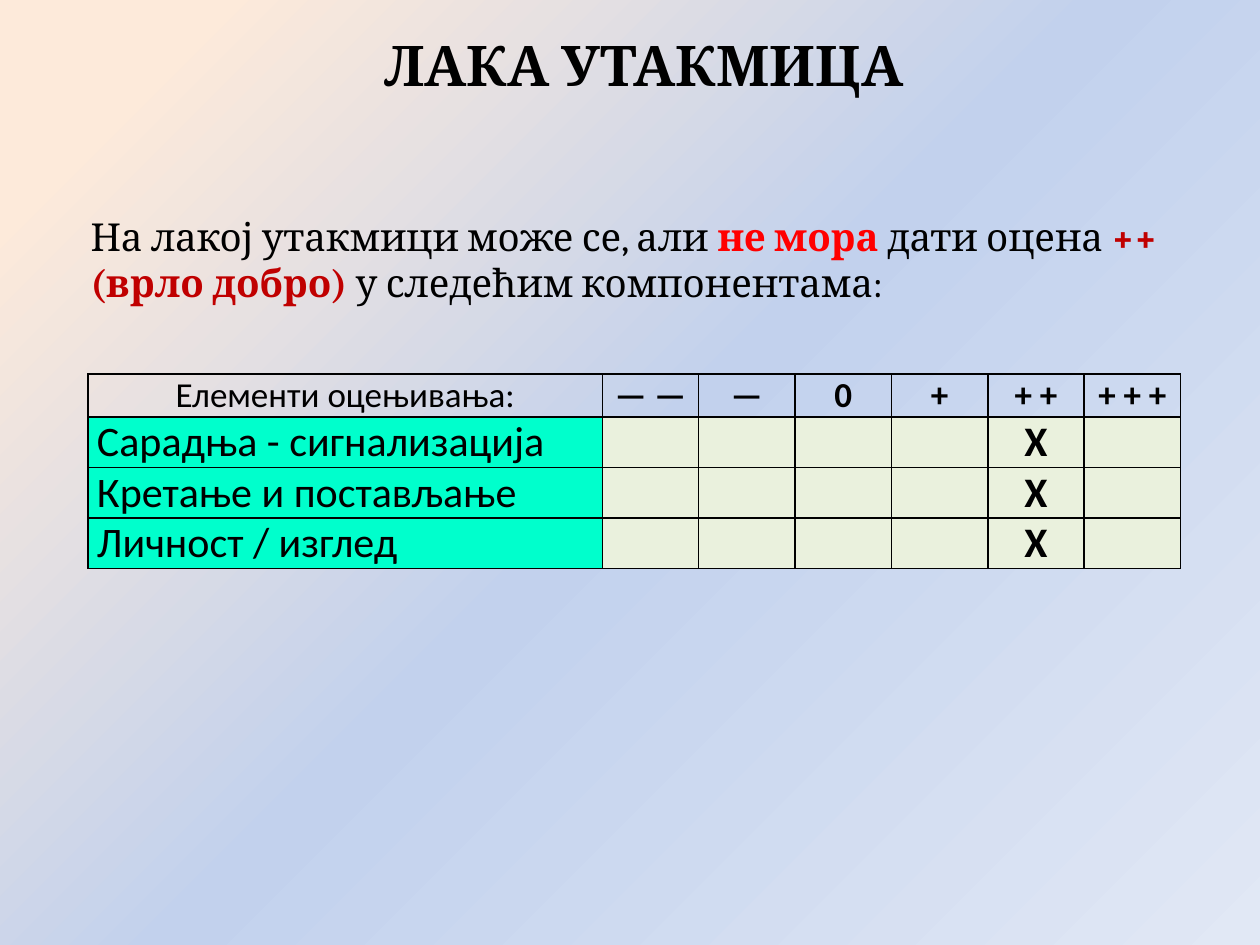
from copy import deepcopy
from dataclasses import dataclass

from lxml.etree import SubElement
from pptx import Presentation
from pptx.dml.color import RGBColor
from pptx.enum.text import MSO_ANCHOR as Anchor, PP_ALIGN as Align
from pptx.oxml.ns import qn
from pptx.util import Inches, Pt


@dataclass(frozen=True)
class Theme:
    """Colours, fonts and type sizes of the slide."""
    ink: str = "000000"
    red: str = "FF0000"
    dark_red: str = "C00000"
    label_fill: str = "00FFCC"
    grade_fill: str = "EAF1DD"
    backdrop: tuple = ((0.1, "FDEADA"), (0.5, "C2D1ED"), (1.0, "E1E8F5"))
    text_font: str = "Cambria"
    table_font: str = "Calibri"
    title_size: int = 32
    body_size: int = 22
    header_size: int = 20
    row_size: int = 24


THEME = Theme()
GRADES = ["— —", "—", "0", "+", "+ +", "+ + +"]
COMPONENTS = ["Сарадња - сигнализација", "Кретање и постављање", "Личност / изглед"]
MARKED_GRADE = "+ +"


def apply(target, values):
    """Set every attribute named in a dict of format values."""
    for name, value in values.items():
        setattr(target, name, value)


def add_span(para, text, font, size, bold=False, color=THEME.ink):
    """Append a formatted run to a paragraph."""
    span = para.add_run()
    span.text = text
    apply(span.font, {"name": font, "size": Pt(size), "bold": bold})
    span.font.color.rgb = RGBColor.from_string(color)


def paint_backdrop(page):
    """Give the page its diagonal gradient background."""
    fill = page.background.fill
    fill.gradient()
    fill.gradient_angle = 315
    stops = page.element.find(".//" + qn("a:gsLst"))
    stops.append(deepcopy(stops[-1]))
    for stop, (position, color) in zip(fill.gradient_stops, THEME.backdrop):
        stop.position = position
        stop.color.rgb = RGBColor.from_string(color)


def add_text(page, top, height, spans, size, anchor, align):
    """Add a wrapped text box holding one paragraph of mixed runs."""
    box = page.shapes.add_textbox(Inches(0.62), Inches(top), Inches(8.98), Inches(height))
    apply(box.text_frame, {"word_wrap": True, "vertical_anchor": anchor})
    para = box.text_frame.paragraphs[0]
    para.alignment = align
    for text, bold, color in spans:
        add_span(para, text, THEME.text_font, size, bold, color)


def add_borders(cell):
    """Draw a thin line on all four sides of a cell."""
    properties = cell._tc.get_or_add_tcPr()
    for index, side in enumerate(("a:lnL", "a:lnR", "a:lnT", "a:lnB")):
        line = SubElement(properties, qn(side), w=str(Pt(1)))
        solid = SubElement(line, qn("a:solidFill"))
        SubElement(solid, qn("a:srgbClr"), val=THEME.ink)
        properties.insert(index, line)


def fill_cell(cell, text, size, bold, align, color=None):
    """Format one table cell and write its text."""
    apply(cell, {"margin_left": Inches(0.07), "margin_right": Inches(0.07),
                 "margin_top": 0, "margin_bottom": 0, "vertical_anchor": Anchor.MIDDLE})
    if color:
        cell.fill.solid()
        cell.fill.fore_color.rgb = RGBColor.from_string(color)
    else:
        cell.fill.background()
    add_borders(cell)
    para = cell.text_frame.paragraphs[0]
    para.alignment = align
    if text:
        add_span(para, text, THEME.table_font, size, bold)


def add_grade_table(page):
    """Add the table of components against grades."""
    rows, columns = len(COMPONENTS) + 1, len(GRADES) + 1
    table = page.shapes.add_table(rows, columns, Inches(0.7), Inches(2.97),
                                  Inches(8.67), Inches(1.56)).table
    apply(table, {"first_row": False, "horz_banding": False})
    for index, column in enumerate(table.columns):
        column.width = Inches(0.765 if index else 4.08)
    for index, row in enumerate(table.rows):
        row.height = Inches(0.4 if index else 0.34)
    for column, text in enumerate(["Елементи оцењивања:"] + GRADES):
        fill_cell(table.cell(0, column), text, THEME.header_size, column > 0, Align.CENTER)
    for row, component in enumerate(COMPONENTS, 1):
        fill_cell(table.cell(row, 0), component, THEME.row_size, False,
                  Align.LEFT, THEME.label_fill)
        for column, grade in enumerate(GRADES, 1):
            mark = "Х" if grade == MARKED_GRADE else ""
            fill_cell(table.cell(row, column), mark, THEME.row_size, True,
                      Align.CENTER, THEME.grade_fill)


def main():
    """Build and save the slide."""
    deck = Presentation()
    apply(deck, {"slide_width": Inches(10), "slide_height": Inches(7.5)})
    page = deck.slides.add_slide(deck.slide_layouts[6])
    paint_backdrop(page)
    add_text(page, 0.16, 0.7, [("ЛАКА УТАКМИЦА", True, THEME.ink)],
             THEME.title_size, Anchor.MIDDLE, Align.CENTER)
    add_text(page, 1.64, 1.02, [
        ("На лакој утакмици може се, али ", False, THEME.ink),
        ("не мора ", True, THEME.red),
        ("дати оцена ", False, THEME.ink),
        ("++ (врло добро) ", True, THEME.dark_red),
        ("у следећим компонентама:", False, THEME.ink),
    ], THEME.body_size, Anchor.TOP, Align.LEFT)
    add_grade_table(page)
    deck.save("out.pptx")


if __name__ == "__main__":
    main()
